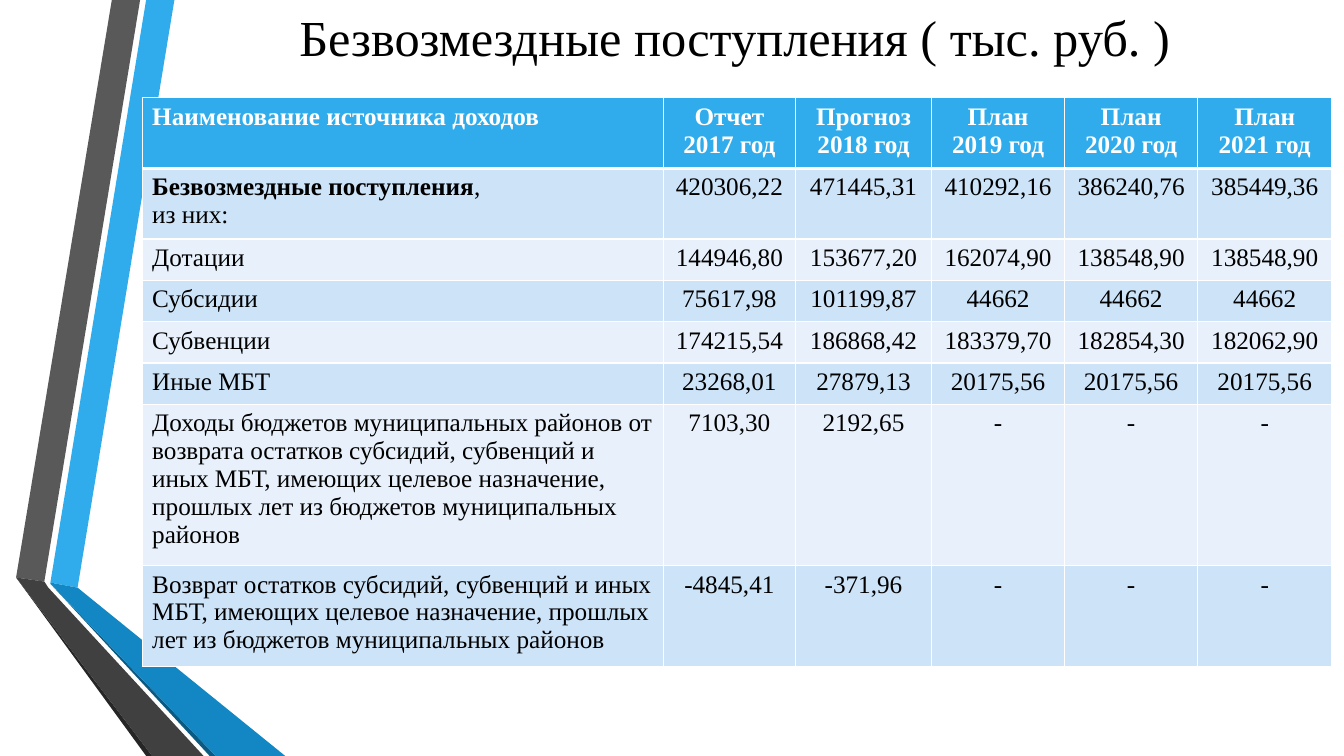
from collections import namedtuple

from lxml.etree import SubElement
from pptx import Presentation
from pptx.dml.color import RGBColor
from pptx.enum.text import MSO_ANCHOR as Anchor, PP_ALIGN as Align
from pptx.oxml.ns import qn
from pptx.util import Inches, Pt

Box = namedtuple("Box", "left top width height")

FONT = "Times New Roman"
BLACK, WHITE, SKY = "000000", "FFFFFF", "30ACEC"
BANDS = ("CDE3F8", "E8F1FB")

# Ribbon corners as (column, row) on a grid of 267 by 750
RIBBON_GRID = (267, 750)
RIBBONS = [
    (SKY, [(34, 578), (61, 583), (157, 0), (129, 0)]),
    ("595959", [(123, 0), (95, 0), (0, 573), (28, 577)]),
    ("262626", [(0, 573), (129, 750), (135, 750)]),
    ("0C5A82", [(34, 579), (192, 750), (198, 750)]),
    ("1287C3", [(34, 579), (198, 750), (267, 750), (61, 583), (34, 578)]),
    ("404040", [(186, 750), (32, 583), (28, 577), (0, 573), (135, 750)]),
]

TITLE = "Безвозмездные поступления ( тыс. руб. )"
COLUMN_SHARES = (517, 131, 135, 132, 132, 133)
HEADER = ["Наименование источника доходов", "Отчет 2017 год", "Прогноз 2018 год",
          "План 2019 год", "План 2020 год", "План 2021 год"]
TOTAL_LABEL = "Безвозмездные поступления"
INCOME = [
    [TOTAL_LABEL + ",\nиз них:",
     "420306,22", "471445,31", "410292,16", "386240,76", "385449,36"],
    ["Дотации", "144946,80", "153677,20", "162074,90", "138548,90", "138548,90"],
    ["Субсидии", "75617,98", "101199,87", "44662", "44662", "44662"],
    ["Субвенции", "174215,54", "186868,42", "183379,70", "182854,30", "182062,90"],
    ["Иные МБТ", "23268,01", "27879,13", "20175,56", "20175,56", "20175,56"],
    ["Доходы бюджетов муниципальных районов от возврата остатков субсидий, "
     "субвенций и иных МБТ, имеющих целевое назначение, прошлых лет из бюджетов "
     "муниципальных районов", "7103,30", "2192,65", "-", "-", "-"],
    ["Возврат остатков субсидий, субвенций и иных МБТ, имеющих целевое назначение, "
     "прошлых лет из бюджетов муниципальных районов",
     "-4845,41", "-371,96", "-", "-", "-"],
]


def paint(target, color):
    """Give a fill or a font colour the hex value."""
    if hasattr(target, "solid"):
        target.solid()
        target = target.fore_color
    target.rgb = RGBColor.from_string(color)


def add_run(paragraph, text, size, color, bold=False):
    run = paragraph.add_run()
    run.text = text
    for name, value in {"name": FONT, "size": Pt(size), "bold": bold}.items():
        setattr(run.font, name, value)
    paint(run.font.color, color)


def draw_ribbons(slide, box):
    columns, rows = RIBBON_GRID
    scale = (box.width / columns, box.height / rows)
    for color, (start, *corners) in RIBBONS:
        builder = slide.shapes.build_freeform(*start, scale=scale)
        builder.add_line_segments(corners, close=True)
        ribbon = builder.convert_to_shape(box.left, box.top)
        ribbon.shadow.inherit = False
        ribbon.line.fill.background()
        paint(ribbon.fill, color)


def write_title(slide, box):
    frame = slide.shapes.add_textbox(*box).text_frame
    layout = {"word_wrap": True, "vertical_anchor": Anchor.MIDDLE,
              "margin_top": 0, "margin_bottom": 0}
    for name, value in layout.items():
        setattr(frame, name, value)
    heading = frame.paragraphs[0]
    heading.alignment = Align.CENTER
    add_run(heading, TITLE, 36, BLACK)


def draw_borders(cell, top, bottom):
    """Rule a cell in white; top and bottom are widths in points."""
    properties = cell._tc.get_or_add_tcPr()
    for side, width in {"L": 1, "R": 1, "T": top, "B": bottom}.items():
        edge = SubElement(properties, qn(f"a:ln{side}"), w=str(Pt(width)))
        fill = SubElement(edge, qn("a:solidFill"))
        SubElement(fill, qn("a:srgbClr"), val=WHITE)


def fill_cell(cell, text, row, column):
    is_header = row == 0
    draw_borders(cell, top=3 if row == 1 else 1, bottom=3 if is_header else 1)
    paint(cell.fill, SKY if is_header else BANDS[(row - 1) % 2])
    color = WHITE if is_header else BLACK
    frame = cell.text_frame
    for index, line in enumerate(text.split("\n")):
        paragraph = frame.add_paragraph() if index else frame.paragraphs[0]
        paragraph.alignment = Align.CENTER if column else Align.LEFT
        if line.startswith(TOTAL_LABEL):
            add_run(paragraph, TOTAL_LABEL, 18, color, bold=True)
            line = line.removeprefix(TOTAL_LABEL)
        add_run(paragraph, line, 18, color, bold=is_header)


def draw_income_table(slide, box):
    content = [HEADER, *INCOME]
    table = slide.shapes.add_table(len(content), len(HEADER), *box).table
    for column, share in zip(table.columns, COLUMN_SHARES):
        column.width = int(box.width * share / sum(COLUMN_SHARES))
    for row, texts in enumerate(content):
        for column, text in enumerate(texts):
            fill_cell(table.cell(row, column), text, row, column)


def main():
    deck = Presentation()
    deck.slide_width, deck.slide_height = Inches(13.33), Inches(7.5)
    slide = deck.slides.add_slide(deck.slide_layouts[6])
    draw_ribbons(slide, Box(*map(Inches, (0.16, 0, 2.67, 7.5))))
    write_title(slide, Box(*map(Inches, (1.81, 0.08, 10.96, 0.57))))
    draw_income_table(slide, Box(*map(Inches, (1.41, 0.97, 11.8, 3.28))))
    deck.save("out.pptx")


if __name__ == "__main__":
    main()
